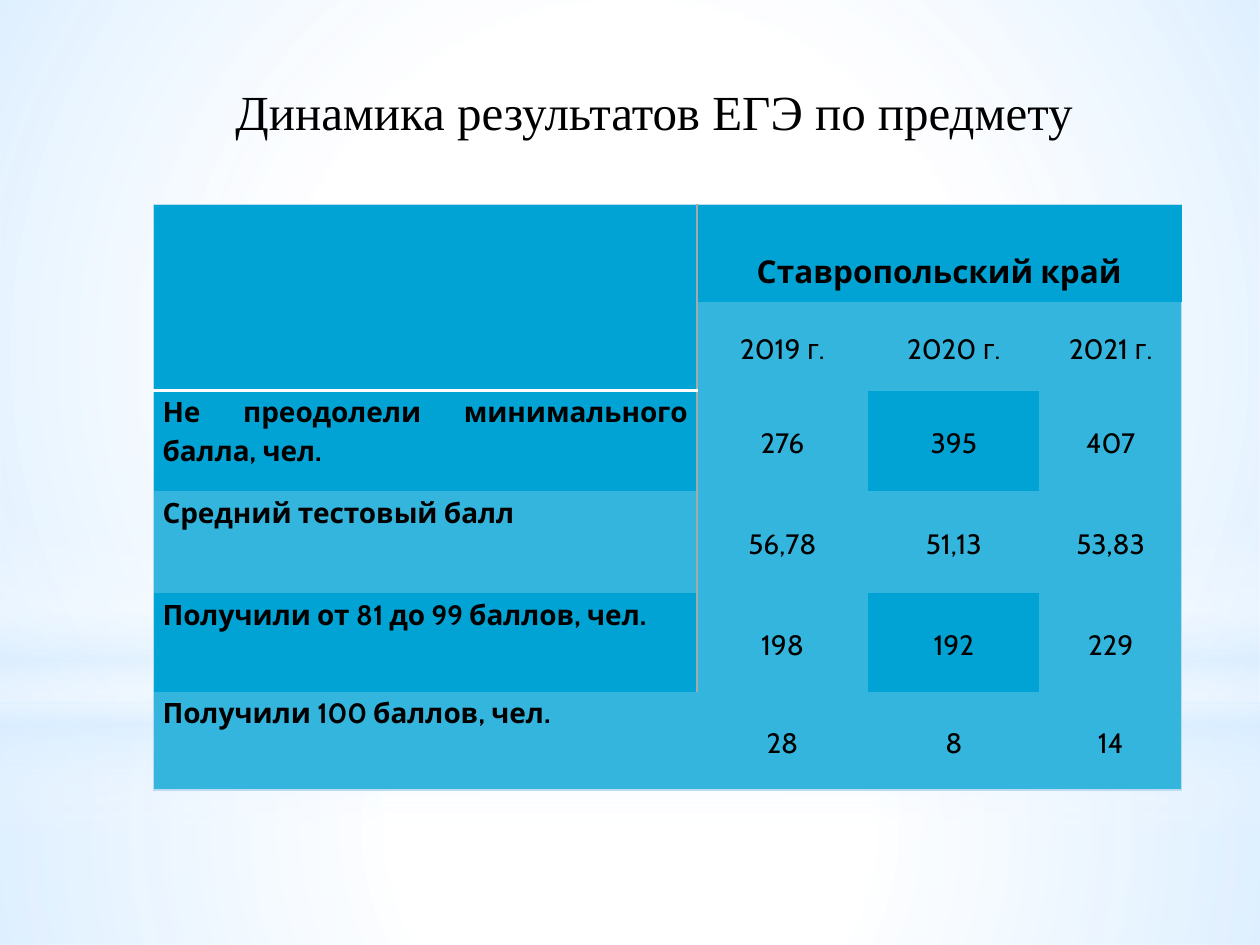
from dataclasses import dataclass

from lxml import etree
from pptx import Presentation
from pptx.dml.color import RGBColor as RGB
from pptx.enum.shapes import MSO_SHAPE as SHAPE
from pptx.enum.text import MSO_ANCHOR as ANCHOR, MSO_AUTO_SIZE as FIT, PP_ALIGN as ALIGN
from pptx.oxml import parse_xml
from pptx.oxml.ns import nsdecls, qn
from pptx.util import Inches, Pt


@dataclass(frozen=True)
class Theme:
    white: str = "FFFFFF"
    sky: str = "D6ECFF"
    ink: str = "000000"
    dark: str = "00A3D4"
    light: str = "33B5DD"
    frame: str = "BDDBEE"
    divider: str = "A9A9A9"
    title_font: str = "Times New Roman"
    body_font: str = "Cabin"
    title_size: int = 28
    head_size: int = 18
    body_size: int = 16
    no_grid: str = "{2D5ABB26-0587-4C30-8999-92F81FD0307C}"


def set_all(obj, values):
    for name, value in values.items():
        setattr(obj, name, value)


class SlideBuilder:
    def __init__(self, prs, theme):
        self.theme = theme
        self.slide = prs.slides.add_slide(prs.slide_layouts[5])

    def glow(self, kind, box, stops, direction):
        """Borderless shape with a gradient of (position, colour, opacity) stops."""
        sp = self.slide.shapes.add_shape(kind, *map(Inches, box))
        sp.shadow.inherit = False
        sp.line.fill.background()
        sp.fill.background()
        gs = "".join(
            f'<a:gs pos="{pos * 1000}"><a:srgbClr val="{color}">'
            f'<a:alpha val="{alpha * 1000}"/></a:srgbClr></a:gs>'
            for pos, color, alpha in stops)
        grad = parse_xml(f'<a:gradFill {nsdecls("a")} rotWithShape="1">'
                         f'<a:gsLst>{gs}</a:gsLst>{direction}</a:gradFill>')
        sp_pr = sp.element.spPr
        sp_pr.replace(sp_pr.find(qn("a:noFill")), grad)

    def put_text(self, tf, text, align, font):
        p = tf.paragraphs[0]
        p.alignment = align
        r = p.add_run()
        r.text = text
        set_all(r.font, font)
        r.font.color.rgb = RGB.from_string(self.theme.ink)
        return p

    def title(self, text, box):
        t = self.theme
        sp = self.slide.shapes.title
        # Bring the title in front of the backdrop
        self.slide.shapes.element.append(sp.element)
        set_all(sp, dict(zip(("left", "top", "width", "height"), map(Inches, box))))
        tf = sp.text_frame
        set_all(tf, dict(word_wrap=True, auto_size=FIT.NONE, vertical_anchor=ANCHOR.TOP))
        p = self.put_text(tf, text, ALIGN.CENTER,
                          dict(name=t.title_font, size=Pt(t.title_size), bold=False))
        p.space_after = Pt(3)
        p._p.get_or_add_pPr().set("marL", str(Inches(0.05)))

    def table(self, left, top, cols, rows):
        shape = self.slide.shapes.add_table(
            len(rows), len(cols), Inches(left), Inches(top),
            Inches(sum(cols)), Inches(sum(rows)))
        tbl = shape.table
        set_all(tbl, dict(first_row=False, horz_banding=False))
        tbl._tbl.tblPr.find(qn("a:tableStyleId")).text = self.theme.no_grid
        for col, width in zip(tbl.columns, cols):
            col.width = Inches(width)
        for row, height in zip(tbl.rows, rows):
            row.height = Inches(height)
        return tbl

    def cell(self, cell, fill, borders):
        """Fill a cell and draw its borders, given as {side: (colour, points)}."""
        tc_pr = cell._tc.get_or_add_tcPr()
        for side in "LRTB":
            if side in borders:
                color, width = borders[side]
                ln = etree.SubElement(tc_pr, qn(f"a:ln{side}"), w=str(Pt(width)))
                solid = etree.SubElement(ln, qn("a:solidFill"))
                etree.SubElement(solid, qn("a:srgbClr"), val=color)
        cell.fill.solid()
        cell.fill.fore_color.rgb = RGB.from_string(fill)

    def cell_text(self, cell, text, align, anchor, size, bold, inset_top=0):
        set_all(cell, dict(
            margin_left=Inches(0.07), margin_right=Inches(0.07),
            margin_top=Inches(inset_top), margin_bottom=0, vertical_anchor=anchor))
        p = self.put_text(cell.text_frame, text, align,
                          dict(name=self.theme.body_font, size=Pt(size), bold=bold))
        p.line_spacing = 1.15


def add_backdrop(s):
    t = s.theme
    radial = ('<a:path path="circle">'
              '<a:fillToRect l="50000" t="50000" r="50000" b="50000"/></a:path>')
    vertical = '<a:lin ang="5400000" scaled="0"/>'
    s.glow(SHAPE.RECTANGLE, (0, 5.58, 10, 1.92),
           [(0, t.white, 91), (37, t.white, 76), (100, t.sky, 79)], radial)
    s.glow(SHAPE.RECTANGLE, (0, 0, 10, 5.58),
           [(0, t.white, 89), (48, t.white, 62), (100, t.sky, 79)], radial)
    s.glow(SHAPE.RECTANGLE, (0, 4.12, 10, 2.5),
           [(0, t.white, 0), (29, t.white, 30), (45, t.sky, 40),
            (55, t.white, 26), (65, t.sky, 60), (100, t.white, 0)], vertical)
    s.glow(SHAPE.OVAL, (0, 1.75, 10, 5.58),
           [(0, t.white, 100), (56, t.white, 0)], radial)


def add_results(s):
    t = s.theme
    years = ["2019 г.", "2020 г.", "2021 г."]
    results = [
        ("Не преодолели минимального балла, чел.", "276", "395", "407"),
        ("Средний тестовый балл", "56,78", "51,13", "53,83"),
        ("Получили от 81 до 99 баллов, чел.", "198", "192", "229"),
        ("Получили 100 баллов, чел.", "28", "8", "14"),
    ]
    tbl = s.table(1.22, 1.62, [4.31, 1.36, 1.36, 1.13],
                  [0.78, 0.7, 0.8, 0.81, 0.78, 0.78])
    tbl.cell(0, 0).merge(tbl.cell(1, 0))
    tbl.cell(0, 1).merge(tbl.cell(0, 3))

    # Fills and borders: outer frame, divider after the labels, banded rows
    last_row, last_col = len(tbl.rows) - 1, len(tbl.columns) - 1
    frame, divider = (t.frame, 0.75), (t.divider, 1.25)
    for i in range(last_row + 1):
        for j in range(last_col + 1):
            borders = {side: frame for side, on in dict(
                L=j == 0, R=j == last_col, T=i == 0, B=i == last_row).items() if on}
            if j == 0 and i < last_row:
                borders["R"] = divider
            if j == 0 and i < 2:
                borders["B"] = (t.white, 2)
            banded = i % 2 == 0 and j in (0, 2)
            dark = i == 0 or (i, j) == (1, 0) or banded
            s.cell(tbl.cell(i, j), t.dark if dark else t.light, borders)

    # Header, then years and results
    s.cell_text(tbl.cell(0, 1), "Ставропольский край", ALIGN.CENTER, ANCHOR.TOP,
                t.head_size, True, inset_top=0.34)
    for i, (label, *values) in enumerate([("", *years), *results], start=1):
        if label:
            s.cell_text(tbl.cell(i, 0), label, ALIGN.JUSTIFY, ANCHOR.TOP, t.body_size, True)
        for j, value in enumerate(values, start=1):
            s.cell_text(tbl.cell(i, j), value, ALIGN.CENTER, ANCHOR.MIDDLE,
                        t.body_size, False)


def main():
    prs = Presentation()
    set_all(prs, dict(slide_width=Inches(10), slide_height=Inches(7.5)))
    s = SlideBuilder(prs, Theme())
    add_backdrop(s)
    s.title("Динамика результатов ЕГЭ по предмету", (0.44, 0.6, 9.45, 0.87))
    add_results(s)
    prs.save("out.pptx")


if __name__ == "__main__":
    main()
